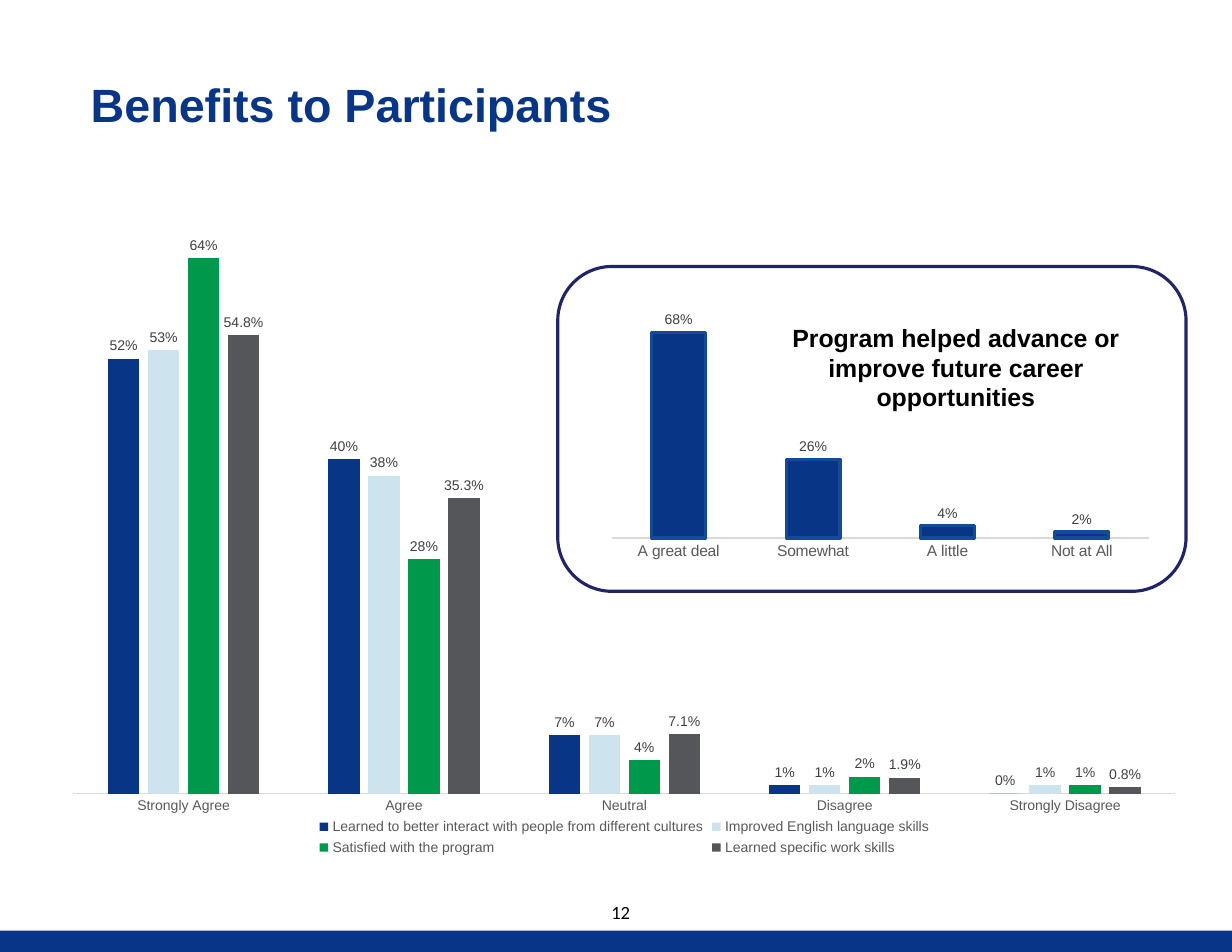
import pptx
import pptx.chart.data
import pptx.dml.color
import pptx.enum.chart
import pptx.enum.shapes
import pptx.enum.text
import pptx.oxml
import pptx.util
from pptx.util import Inches

THEME = {
    "navy": "093587", "band": "093588", "pale": "CDE3ED", "green": "00994C", "grey": "55565A",
    "bar_edge": "124B98", "frame": "202568", "axis": "D9D9D9", "axis_text": "595959",
    "label": "404040", "black": "000000",
    "title_size": 30, "callout_size": 16, "number_size": 12, "chart_size": 10, "small_size": 9,
    "font": "Arial", "number_font": "Calibri",
}


def style_font(font, size, color, name=THEME["font"], bold=False):
    values = {"size": pptx.util.Pt(THEME[size]), "name": name, "bold": bold}
    for key, value in values.items():
        setattr(font, key, value)
    font.color.rgb = pptx.dml.color.RGBColor.from_string(THEME[color])


def add_columns(page, place, categories, series, top, gap, overlap, category_size):
    data = pptx.chart.data.CategoryChartData(number_format="0%")
    data.categories = categories
    for name, values, color, number_format in series:
        data.add_series(name, values, number_format)
    kind = pptx.enum.chart.XL_CHART_TYPE.COLUMN_CLUSTERED
    chart = page.shapes.add_chart(kind, *map(Inches, place), data).chart
    chart.has_title = False
    chart.has_legend = False
    style_font(chart.font, "chart_size", "black")

    # Axes: only the category line shows
    for key, value in {"minimum_scale": 0, "maximum_scale": top,
                       "has_major_gridlines": False, "visible": False}.items():
        setattr(chart.value_axis, key, value)
    axis = chart.category_axis
    axis.major_tick_mark = pptx.enum.chart.XL_TICK_MARK.NONE
    axis.format.line.color.rgb = pptx.dml.color.RGBColor.from_string(THEME["axis"])
    axis.format.line.width = pptx.util.Pt(0.75)
    style_font(axis.tick_labels.font, category_size, "axis_text")

    # Columns and their labels
    plot = chart.plots[0]
    for key, value in {"gap_width": gap, "overlap": overlap, "vary_by_categories": False}.items():
        setattr(plot, key, value)
    for columns, (name, values, color, number_format) in zip(plot.series, series):
        columns.format.fill.solid()
        columns.format.fill.fore_color.rgb = pptx.dml.color.RGBColor.from_string(THEME[color])
        labels = columns.data_labels
        for key, value in {"show_value": True, "number_format": number_format,
                           "number_format_is_linked": False,
                           "position": pptx.enum.chart.XL_LABEL_POSITION.OUTSIDE_END}.items():
            setattr(labels, key, value)
        style_font(labels.font, "small_size", "label")

    # Fixed inner plot area
    area = chart._chartSpace.chart.plotArea
    for old in area.findall(pptx.oxml.ns.qn("c:layout")):
        area.remove(old)
    spots = "".join(f'<c:{key} val="{value}"/>' for key, value in
                    {"layoutTarget": "inner", "xMode": "edge", "yMode": "edge",
                     "x": 0.02, "y": 0.02, "w": 0.96, "h": 0.88}.items())
    area.insert(0, pptx.oxml.parse_xml(
        f'<c:layout {pptx.oxml.ns.nsdecls("c")}><c:manualLayout>{spots}</c:manualLayout></c:layout>'))
    return chart


deck = pptx.Presentation()
deck.slide_width = Inches(11)
deck.slide_height = Inches(8.5)
page = deck.slides.add_slide(deck.slide_layouts[5])

# Bottom band
band = page.shapes.add_shape(pptx.enum.shapes.MSO_SHAPE.RECTANGLE,
                             Inches(0), Inches(8.31), Inches(11), Inches(0.2))
band.shadow.inherit = False
band.fill.solid()
band.fill.fore_color.rgb = pptx.dml.color.RGBColor.from_string(THEME["band"])
band.line.fill.background()

# Main chart
answers = ["Strongly Agree", "Agree", "Neutral", "Disagree", "Strongly Disagree"]
benefits = [
    ("Learned to better interact with people from different cultures",
     (0.52, 0.40, 0.07, 0.01, 0), "navy", "0%"),
    ("Improved English language skills", (0.53, 0.38, 0.07, 0.01, 0.01), "pale", "0%"),
    ("Satisfied with the program", (0.64, 0.28, 0.04, 0.02, 0.01), "green", "0%"),
    ("Learned specific work skills", (0.548, 0.353, 0.071, 0.019, 0.008), "grey", "0.0%"),
]
main_chart = add_columns(page, (0.45, 1.74, 10.25, 5.94), answers, benefits,
                         top=0.7, gap=219, overlap=-27, category_size="small_size")
main_chart.has_legend = True
main_chart.legend.position = pptx.enum.chart.XL_LEGEND_POSITION.BOTTOM
main_chart.legend.include_in_layout = False
style_font(main_chart.legend.font, "small_size", "axis_text")

# Career chart
career = [("Series 1", (0.68, 0.26, 0.04, 0.02), "navy", "0%")]
career_chart = add_columns(page, (5.36, 2.6, 5, 2.45),
                           ["A great deal", "Somewhat", "A little", "Not at All"], career,
                           top=0.8, gap=150, overlap=0, category_size="chart_size")
edge = career_chart.plots[0].series[0].format.line
edge.color.rgb = pptx.dml.color.RGBColor.from_string(THEME["bar_edge"])
edge.width = pptx.util.Pt(2)

# Title, page number and career heading
title = page.shapes.title
number = page.shapes.add_textbox(0, 0, 0, 0)
heading = page.shapes.add_textbox(0, 0, 0, 0)
align = pptx.enum.text.PP_ALIGN
anchor = pptx.enum.text.MSO_ANCHOR
texts = [
    (title, (0.71, 0.49, 5.28, 0.87), "Benefits to Participants", align.LEFT, anchor.MIDDLE,
     ("title_size", "navy", THEME["font"], True)),
    (number, (5.36, 7.99, 0.46, 0.3), "12", align.LEFT, anchor.TOP,
     ("number_size", "black", THEME["number_font"], False)),
    (heading, (6.71, 2.83, 3.65, 0.9),
     "Program helped advance or improve future career opportunities", align.CENTER, anchor.TOP,
     ("callout_size", "black", THEME["font"], True)),
]
for box, place, words, alignment, vertical, look in texts:
    for key, value in zip(("left", "top", "width", "height"), place):
        setattr(box, key, Inches(value))
    frame = box.text_frame
    for key, value in {"word_wrap": True, "auto_size": pptx.enum.text.MSO_AUTO_SIZE.NONE,
                       "vertical_anchor": vertical}.items():
        setattr(frame, key, value)
    para = frame.paragraphs[0]
    para.alignment = alignment
    span = para.add_run()
    span.text = words
    style_font(span.font, *look)

# Rounded frame around the career chart
outline = page.shapes.add_shape(pptx.enum.shapes.MSO_SHAPE.ROUNDED_RECTANGLE,
                                Inches(4.98), Inches(2.38), Inches(5.61), Inches(2.9))
outline.shadow.inherit = False
outline.fill.background()
outline.line.color.rgb = pptx.dml.color.RGBColor.from_string(THEME["frame"])
outline.line.width = pptx.util.Pt(2)

deck.save("out.pptx")
